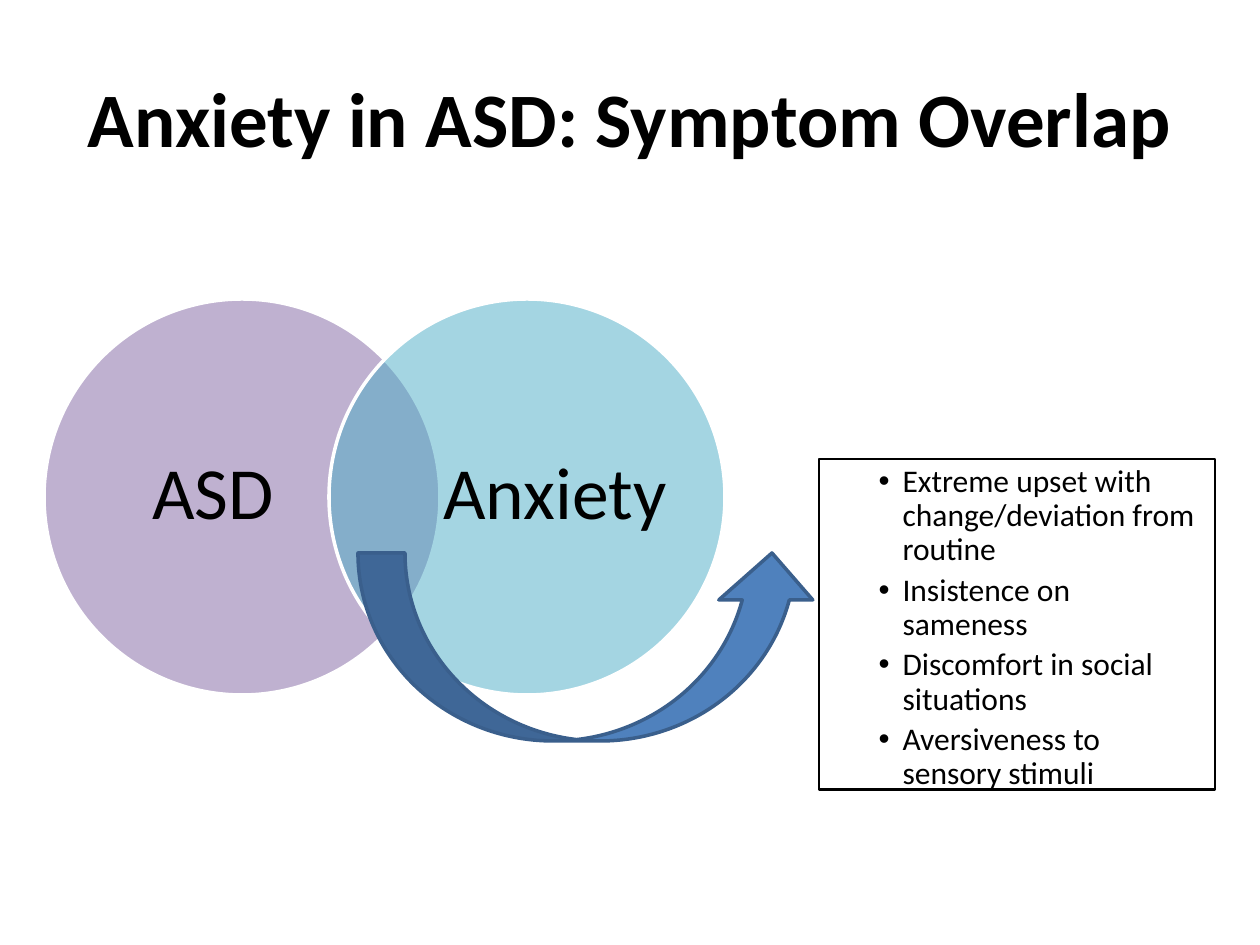
from lxml import etree
from pptx import Presentation
from pptx.dml.color import RGBColor
from pptx.enum.shapes import MSO_SHAPE
from pptx.enum.text import MSO_ANCHOR, MSO_AUTO_SIZE, PP_ALIGN
from pptx.oxml.ns import qn
from pptx.util import Emu, Pt

PX = 914400 / 126
CENTER, LEFT = PP_ALIGN.CENTER, PP_ALIGN.LEFT
MIDDLE, TOP = MSO_ANCHOR.MIDDLE, MSO_ANCHOR.TOP
GROW, FIXED = MSO_AUTO_SIZE.SHAPE_TO_FIT_TEXT, MSO_AUTO_SIZE.NONE
ELLIPSE, CURVED_ARROW = MSO_SHAPE.OVAL, MSO_SHAPE.CURVED_UP_ARROW


def px(value):
    return Emu(round(value * PX))


def color(value):
    return RGBColor.from_string(value)


def apply(target, values):
    for name, value in values.items():
        setattr(target, name, value)


class SlideBuilder:
    font_name = "Calibri"
    text_color = "000000"

    def __init__(self, slide):
        self.slide = slide

    def place(self, shape, area):
        apply(shape, dict(zip(("left", "top", "width", "height"), map(px, area))))

    def add_span(self, para, text, size, bold=False):
        span = para.add_run()
        span.text = text
        apply(span.font, {"name": self.font_name, "size": Pt(size), "bold": bold})
        span.font.color.rgb = color(self.text_color)

    def outline(self, shape, line_color, width):
        shape.line.color.rgb = color(line_color)
        shape.line.width = Pt(width)

    def title(self, text, area, size):
        box = self.slide.shapes.title
        self.place(box, area)
        apply(box.text_frame, {"vertical_anchor": MIDDLE, "word_wrap": True, "auto_size": FIXED})
        para = box.text_frame.paragraphs[0]
        para.alignment = CENTER
        self.add_span(para, text, size, bold=True)

    def shape(self, kind, area, fill, line_color, alpha=None):
        shape = self.slide.shapes.add_shape(kind, *map(px, area))
        shape.shadow.inherit = False
        shape.fill.solid()
        shape.fill.fore_color.rgb = color(fill)
        if alpha is not None:
            fill_color = shape.element.spPr.find(qn("a:solidFill")).find(qn("a:srgbClr"))
            etree.SubElement(fill_color, qn("a:alpha")).set("val", str(alpha * 1000))
        self.outline(shape, line_color, 2)

    def label(self, text, area, size):
        frame = self.slide.shapes.add_textbox(*map(px, area)).text_frame
        apply(frame, {"word_wrap": True, "vertical_anchor": MIDDLE, "margin_left": 0,
                      "margin_top": 0, "margin_right": 0, "margin_bottom": 0})
        para = frame.paragraphs[0]
        apply(para, {"alignment": CENTER, "line_spacing": 0.9})
        self.add_span(para, text, size)

    def bullets(self, items, area, size):
        box = self.slide.placeholders[1]
        self.place(box, area)
        self.outline(box, self.text_color, 1.25)
        frame = box.text_frame
        apply(frame, {"word_wrap": True, "vertical_anchor": TOP, "auto_size": GROW})
        for index, item in enumerate(items):
            para = frame.add_paragraph() if index else frame.paragraphs[0]
            properties = para._p.get_or_add_pPr()
            properties.set("marL", str(px(71)))
            properties.set("indent", str(px(-24)))
            etree.SubElement(properties, qn("a:buFont")).set("typeface", "Arial")
            etree.SubElement(properties, qn("a:buChar")).set("char", "•")
            apply(para, {"level": 1, "alignment": LEFT, "line_spacing": 0.9,
                         "space_before": Pt(3.8 if index else 0)})
            self.add_span(para, item, size)


def main():
    deck = Presentation()
    deck.slide_width, deck.slide_height = px(1260), px(945)
    page = SlideBuilder(deck.slides.add_slide(deck.slide_layouts[1]))

    page.title("Anxiety in ASD: Symptom Overlap", (63, 38, 1134, 158), 44)
    circles = (("ASD", 44, 99, "8064A2"), ("Anxiety", 329, 441, "4BACC6"))
    for text, circle_left, text_left, fill in circles:
        page.shape(ELLIPSE, (circle_left, 299, 396, 396), fill, "FFFFFF", alpha=50)
        page.label(text, (text_left, 345, 228, 302), 42)
    page.bullets(
        ("Extreme upset with change/deviation from routine",
         "Insistence on sameness",
         "Discomfort in social situations",
         "Aversiveness to sensory stimuli"),
        (819, 459, 396, 343), 18)
    page.shape(CURVED_ARROW, (358, 553, 461, 188), "4F81BD", "3A5F8C")

    deck.save("out.pptx")


if __name__ == "__main__":
    main()
